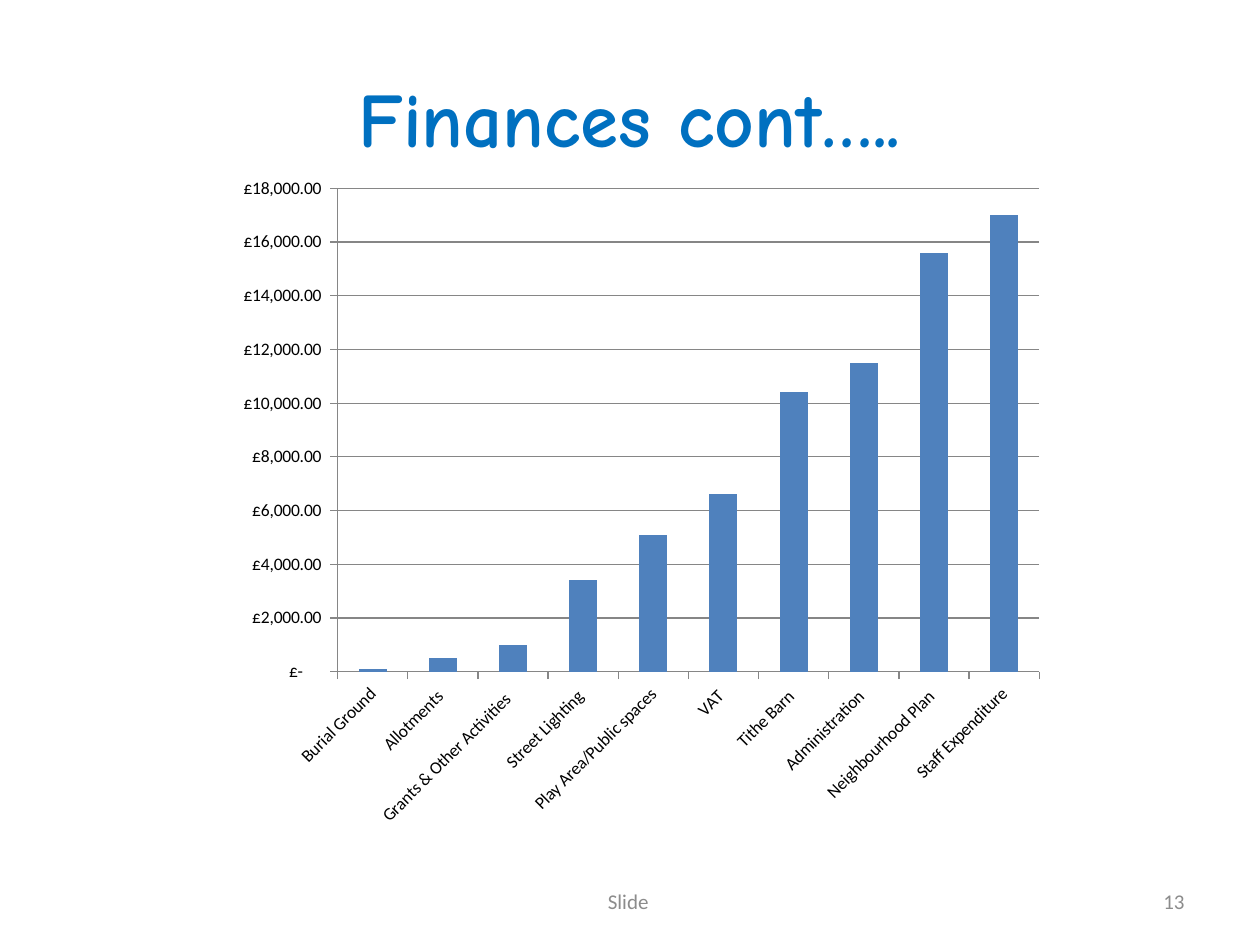
from dataclasses import dataclass

from pptx import Presentation
from pptx.chart.data import CategoryChartData
from pptx.dml.color import RGBColor
from pptx.enum.chart import XL_CHART_TYPE, XL_TICK_MARK
from pptx.enum.text import MSO_ANCHOR, PP_ALIGN
from pptx.util import Inches, Pt

COLUMNS = XL_CHART_TYPE.COLUMN_CLUSTERED
TICK_OUTSIDE = XL_TICK_MARK.OUTSIDE
MIDDLE = MSO_ANCHOR.MIDDLE
CENTER, RIGHT = PP_ALIGN.CENTER, PP_ALIGN.RIGHT
TITLE_ONLY = 5


@dataclass(frozen=True)
class Theme:
    title_font: str = "Comic Neue"
    body_font: str = "Calibri"
    title_size: int = 44
    footer_size: int = 12
    chart_size: int = 10
    title_color: str = "0070C0"
    footer_color: str = "8C8C8C"
    bar_color: str = "4F81BD"
    line_color: str = "868686"
    chart_text_color: str = "000000"


THEME = Theme()
POUNDS = '_("£"* #,##0.00_);_("£"* \\(#,##0.00\\);_("£"* "-"??_);_(@_)'
SPENDING = {
    "Burial Ground": 100,
    "Allotments ": 500,
    "Grants & Other Activities  ": 1000,
    "Street Lighting ": 3400,
    "Play Area/Public spaces": 5100,
    "VAT ": 6600,
    "Tithe Barn ": 10400,
    "Administration ": 11500,
    "Neighbourhood Plan ": 15600,
    "Staff Expenditure": 17000,
}


def style_font(font, name, size, color, bold=False):
    font.name = name
    font.size = Pt(size)
    font.bold = bold
    font.color.rgb = RGBColor.from_string(color)


def fill_text(box, text, align):
    """Set one line of middle-anchored text and return its font."""
    frame = box.text_frame
    frame.text = text
    frame.word_wrap = True
    frame.vertical_anchor = MIDDLE
    para = frame.paragraphs[0]
    para.alignment = align
    return para.runs[0].font


def add_title(page, text):
    title = page.shapes.title
    title.left, title.top = Inches(0.5), Inches(0.3)
    title.width, title.height = Inches(9), Inches(1.25)
    font = fill_text(title, text, CENTER)
    style_font(font, THEME.title_font, THEME.title_size, THEME.title_color, bold=True)


def add_footer(page, text, left, width, align):
    box = page.shapes.add_textbox(Inches(left), Inches(6.95), Inches(width), Inches(0.4))
    font = fill_text(box, text, align)
    style_font(font, THEME.body_font, THEME.footer_size, THEME.footer_color)


def style_line(line):
    line.color.rgb = RGBColor.from_string(THEME.line_color)
    line.width = Pt(0.75)


def add_spending_chart(page):
    data = CategoryChartData()
    data.categories = list(SPENDING)
    data.add_series("Series 1", list(SPENDING.values()))
    chart = page.shapes.add_chart(
        COLUMNS, Inches(1.77), Inches(1.31), Inches(6.61), Inches(5.35), data
    ).chart
    chart.has_legend = False
    chart.has_title = False
    style_font(chart.font, THEME.body_font, THEME.chart_size, THEME.chart_text_color)

    plot = chart.plots[0]
    plot.gap_width = 150
    plot.vary_by_categories = False
    bars = plot.series[0].format.fill
    bars.solid()
    bars.fore_color.rgb = RGBColor.from_string(THEME.bar_color)

    for axis in (chart.category_axis, chart.value_axis):
        axis.major_tick_mark = TICK_OUTSIDE
        style_line(axis.format.line)

    amounts = chart.value_axis
    amounts.minimum_scale, amounts.maximum_scale = 0, 18000
    amounts.major_unit = 2000
    amounts.has_major_gridlines = True
    style_line(amounts.major_gridlines.format.line)
    amounts.tick_labels.number_format = POUNDS
    amounts.tick_labels.number_format_is_linked = False


def main():
    deck = Presentation()
    deck.slide_width, deck.slide_height = Inches(10), Inches(7.5)
    page = deck.slides.add_slide(deck.slide_layouts[TITLE_ONLY])
    add_title(page, "Finances cont…..")
    add_footer(page, "Slide ", 3.42, 3.17, CENTER)
    add_footer(page, "13", 7.17, 2.33, RIGHT)
    add_spending_chart(page)
    deck.save("out.pptx")


if __name__ == "__main__":
    main()
